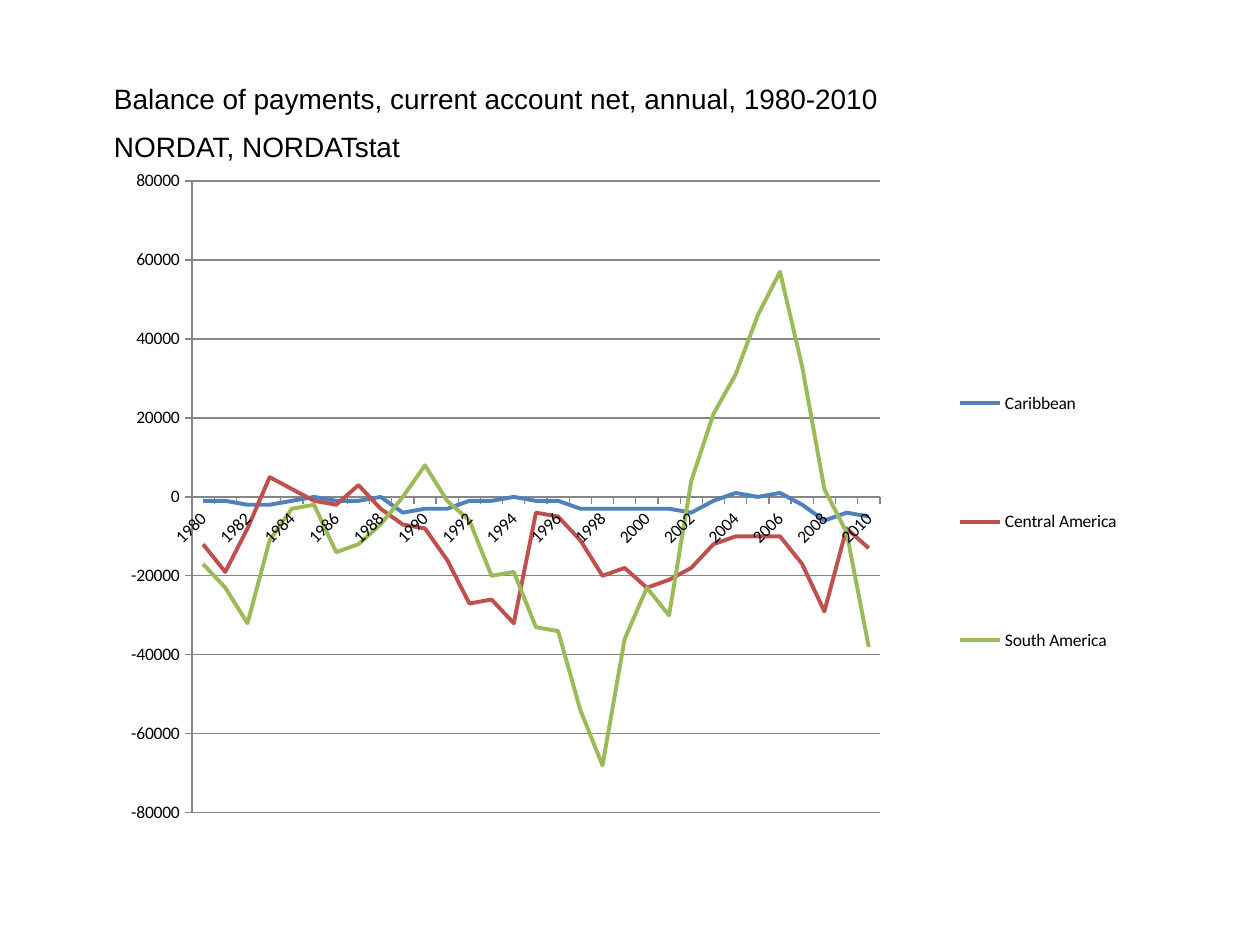
from pptx import Presentation
from pptx.chart.data import CategoryChartData
from pptx.dml.color import RGBColor
from pptx.enum.chart import XL_CHART_TYPE, XL_LEGEND_POSITION, XL_TICK_MARK
from pptx.enum.text import MSO_ANCHOR
from pptx.oxml import parse_xml
from pptx.oxml.ns import nsdecls
from pptx.util import Pt

EMU_PER_PX = 914400 // 126
PLAIN_TABLE_STYLE = "{2D5ABB26-0587-4C30-8999-92F81FD0307C}"
COLORS = {
    "text": "000000",
    "axis": "868686",
    "Caribbean": "4F81BD",
    "Central America": "C0504D",
    "South America": "9BBB59",
}
YEARS = range(1980, 2011)
BALANCES_IN_THOUSANDS = {
    "Caribbean": [
        -1, -1, -2, -2, -1, 0, -1, -1, 0, -4, -3, -3, -1, -1, 0, -1,
        -1, -3, -3, -3, -3, -3, -4, -1, 1, 0, 1, -2, -6, -4, -5],
    "Central America": [
        -12, -19, -8, 5, 2, -1, -2, 3, -3, -7, -8, -16, -27, -26, -32, -4,
        -5, -11, -20, -18, -23, -21, -18, -12, -10, -10, -10, -17, -29, -8, -13],
    "South America": [
        -17, -23, -32, -11, -3, -2, -14, -12, -7, 0, 8, -1, -6, -20, -19, -33,
        -34, -54, -68, -36, -23, -30, 4, 21, 31, 46, 57, 33, 2, -9, -38],
}
HEADINGS = [
    "Balance of payments, current account net, annual, 1980-2010",
    "NORDAT, NORDATstat",
]


def px(length):
    """Convert px to EMU."""
    return length * EMU_PER_PX


def color(name):
    """Look up a named colour."""
    return RGBColor.from_string(COLORS[name])


def style_line(line, name, width):
    """Give a line its colour and width in points."""
    line.color.rgb = color(name)
    line.width = Pt(width)


def set_layout(element, index, box, chart_size, inner=False):
    """Place a chart part at a px box relative to the chart."""
    x, y, width, height = (
        length / total for length, total in zip(box, chart_size * 2))
    target = '<c:layoutTarget val="inner"/>' if inner else ""
    layout = parse_xml(
        f'<c:layout {nsdecls("c")}><c:manualLayout>{target}'
        '<c:xMode val="edge"/><c:yMode val="edge"/>'
        f'<c:x val="{x}"/><c:y val="{y}"/><c:w val="{width}"/><c:h val="{height}"/>'
        '</c:manualLayout></c:layout>')
    for old in element.findall(layout.tag):
        element.remove(old)
    element.insert(index, layout)


def style_axes(chart):
    """Scale the axes and format their ticks, labels and gridlines."""
    years, values = chart.category_axis, chart.value_axis
    for axis in (years, values):
        axis.major_tick_mark = XL_TICK_MARK.OUTSIDE
        axis.minor_tick_mark = XL_TICK_MARK.NONE
        style_line(axis.format.line, "axis", 0.75)
    values.minimum_scale, values.maximum_scale = -80000, 80000
    values.major_unit = 20000
    values.tick_labels.number_format = "0"
    values.tick_labels.number_format_is_linked = False
    values.has_major_gridlines = True
    style_line(values.major_gridlines.format.line, "axis", 0.75)
    years.tick_labels.font.size = Pt(10)
    years._element.txPr.bodyPr.set("rot", "-2700000")
    skip = parse_xml(f'<c:tickLblSkip {nsdecls("c")} val="2"/>')
    years._element.find("{*}noMultiLvlLbl").addprevious(skip)


def add_balance_chart(page, left, top, width, height):
    """Draw the balances by region as a line chart in the given box."""
    data = CategoryChartData()
    data.categories = [str(year) for year in YEARS]
    for region, balances in BALANCES_IN_THOUSANDS.items():
        data.add_series(region, [balance * 1000 for balance in balances])
    chart = page.shapes.add_chart(
        XL_CHART_TYPE.LINE, px(left), px(top), px(width), px(height), data).chart
    chart.has_title = False
    chart.font.name = "Calibri"
    chart.font.size = Pt(10)
    chart.font.color.rgb = color("text")
    chart.plots[0].vary_by_categories = False
    for series in chart.plots[0].series:
        series.smooth = False
        style_line(series.format.line, series.name, 2.25)
    style_axes(chart)
    chart.has_legend = True
    chart.legend.position = XL_LEGEND_POSITION.RIGHT
    chart.legend.include_in_layout = False
    size = (width, height)
    set_layout(chart.legend._element, 1, (878, 150, 213, 454), size)
    plot_area = chart._chartSpace.chart.plotArea
    set_layout(plot_area, 0, (138, 36, 688, 632), size, inner=True)


def add_heading_table(page, left, top, column_widths, row_height):
    """Place the heading and its source in a plain table."""
    table = page.shapes.add_table(
        len(HEADINGS), len(column_widths), px(left), px(top),
        px(sum(column_widths)), px(row_height * len(HEADINGS))).table
    table.first_row = table.horz_banding = False
    table._tbl.tblPr.find("{*}tableStyleId").text = PLAIN_TABLE_STYLE
    for column, width in zip(table.columns, column_widths):
        column.width = px(width)
    for row in table.rows:
        row.height = px(row_height)
    for cell in table.iter_cells():
        cell.fill.background()
        cell.vertical_anchor = MSO_ANCHOR.BOTTOM
        cell.margin_left = cell.margin_right = 0
        cell.margin_top = cell.margin_bottom = 0
    table.cell(0, 0).merge(table.cell(0, len(column_widths) - 1))
    for row, heading in enumerate(HEADINGS):
        cell = table.cell(row, 0)
        cell.text_frame.text = heading
        font = cell.text_frame.paragraphs[0].runs[0].font
        font.name = "Arial"
        font.size = Pt(16)
        font.color.rgb = color("text")


def main():
    """Build the slide and save the deck."""
    deck = Presentation()
    deck.slide_width, deck.slide_height = px(1260), px(945)
    page = deck.slides.add_slide(deck.slide_layouts[6])
    add_balance_chart(page, 54, 145, 1121, 704)
    add_heading_table(page, 114, 66, [509, 178, 178, 178], 49)
    deck.save("out.pptx")


if __name__ == "__main__":
    main()
